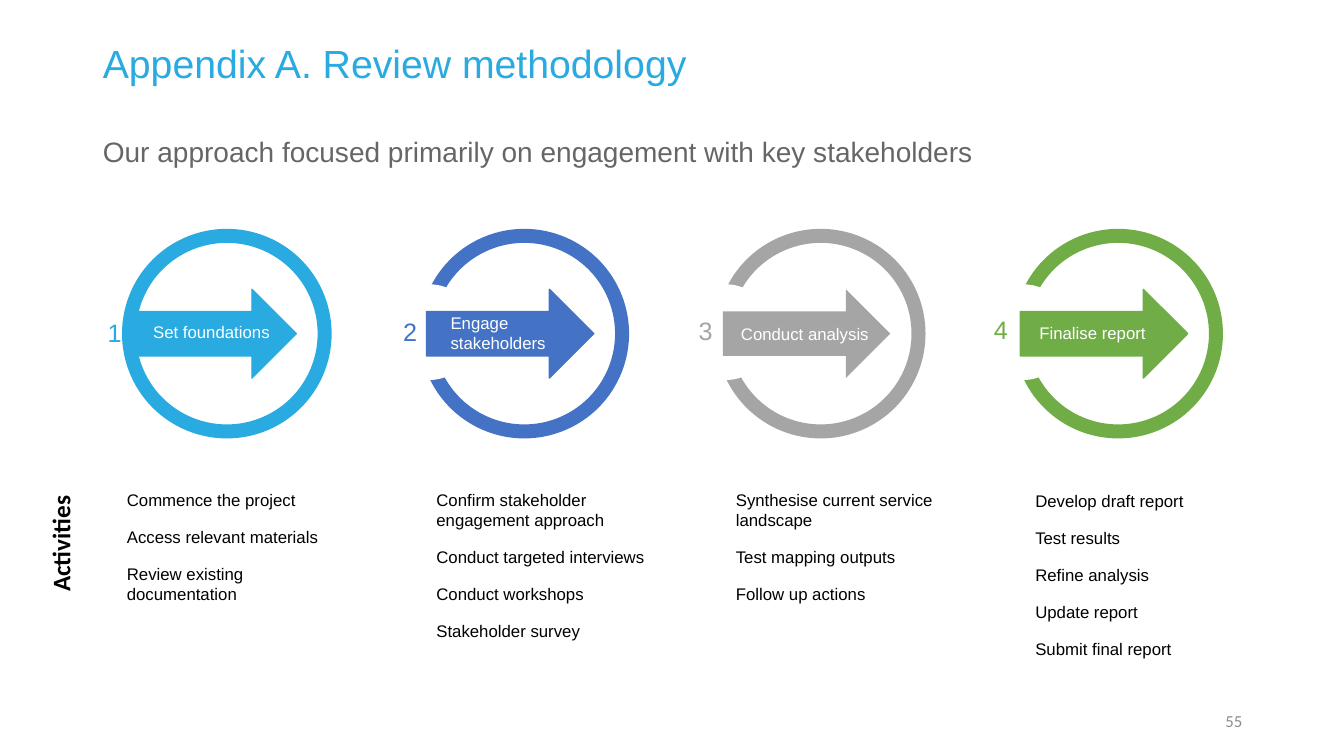
from pptx import Presentation
from pptx.dml.color import RGBColor
from pptx.enum.shapes import MSO_SHAPE
from pptx.enum.text import MSO_ANCHOR, MSO_AUTO_SIZE, PP_ALIGN
from pptx.oxml.ns import qn
from pptx.util import Pt

PX = 9144  # EMU in one px, 100 px to the inch
OVAL, ARROW = MSO_SHAPE.OVAL, MSO_SHAPE.RIGHT_ARROW
TOP, MIDDLE = MSO_ANCHOR.TOP, MSO_ANCHOR.MIDDLE
LEFT, RIGHT = PP_ALIGN.LEFT, PP_ALIGN.RIGHT
GROW, FIXED = MSO_AUTO_SIZE.SHAPE_TO_FIT_TEXT, MSO_AUTO_SIZE.NONE

CYAN = RGBColor(0x29, 0xAA, 0xE1)
BLUE = RGBColor(0x44, 0x72, 0xC4)
GREY = RGBColor(0xA5, 0xA5, 0xA5)
GREEN = RGBColor(0x70, 0xAD, 0x47)
WHITE = RGBColor(0xFF, 0xFF, 0xFF)
BLACK = RGBColor(0, 0, 0)
SUBTITLE_GREY = RGBColor(0x66, 0x66, 0x66)
PAGE_GREY = RGBColor(0x8C, 0x8C, 0x8C)

RING_LEFT, RING_PITCH = 128, 294.67

# colour, label, label box (offset from ring, top, height), list box (left, top, height), activities
STAGES = [
    (CYAN, "Set foundations", (14, 312, 34), (116, 481, 125),
     ["Commence the project", "Access relevant materials", "Review existing documentation"]),
    (BLUE, "Engage stakeholders", (14, 308, 44), (423, 481, 162),
     ["Confirm stakeholder engagement approach", "Conduct targeted interviews",
      "Conduct workshops", "Stakeholder survey"]),
    (GREY, "Conduct analysis", (8, 314, 34), (720, 481, 125),
     ["Synthesise current service landscape", "Test mapping outputs", "Follow up actions"]),
    (GREEN, "Finalise report", (9, 313, 34), (1017, 482, 178),
     ["Develop draft report", "Test results", "Refine analysis", "Update report",
      "Submit final report"]),
]


def emu(*lengths):
    return [round(n * PX) for n in lengths]


def add_run(p, text, size, color, font="Arial", bold=False):
    r = p.add_run()
    r.text = text
    r.font.name, r.font.size, r.font.bold = font, Pt(size), bold
    r.font.color.rgb = color


def add_text(s, box, lines, size, color, font="Arial", bold=False,
             anchor=TOP, align=LEFT, wrap=True, grow=False):
    """Text box with one paragraph per line, 12 pt apart."""
    sp = s.shapes.add_textbox(*emu(*box))
    tf = sp.text_frame
    tf.word_wrap = wrap
    tf.auto_size = GROW if grow else FIXED
    tf.vertical_anchor = anchor
    for i, line in enumerate(lines):
        p = tf.add_paragraph() if i else tf.paragraphs[0]
        p.alignment = align
        p.space_before = Pt(6 if i else 0)
        p.space_after = Pt(6 if i < len(lines) - 1 else 0)
        add_run(p, line, size, color, font, bold)
    return sp


def fill_placeholder(sp, box, text, size, color):
    sp.left, sp.top, sp.width, sp.height = emu(*box)
    tf = sp.text_frame
    tf.word_wrap = True
    tf.auto_size = FIXED
    tf.vertical_anchor = MIDDLE
    p = tf.paragraphs[0]
    p.alignment = LEFT
    p.space_before = Pt(0)
    add_run(p, text, size, color)
    return p


def remove_bullet(p):
    pPr = p._p.get_or_add_pPr()
    pPr.set("marL", "0")
    pPr.set("indent", "0")
    pPr.append(pPr.makeelement(qn("a:buNone"), {}))


def add_figure(s, preset, box, fill=None, line=None, weight=1):
    sp = s.shapes.add_shape(preset, *emu(*box))
    sp.shadow.inherit = False
    if fill is None:
        sp.fill.background()
    else:
        sp.fill.solid()
        sp.fill.fore_color.rgb = fill
    if line is None:
        sp.line.fill.background()
    else:
        sp.line.color.rgb = line
        sp.line.width = Pt(weight)


def add_stage(s, i, color, label, label_box, list_box, activities):
    x = round(RING_LEFT + i * RING_PITCH)
    add_figure(s, OVAL, (x, 234, 194, 194), line=color, weight=10)
    if i:  # the first ring stays closed
        add_figure(s, OVAL, (x - 45, 282, 95, 95), fill=WHITE)
    add_figure(s, ARROW, (x, 287, 166, 88), fill=color, line=None if color == GREY else color)
    offset, top, height = label_box
    add_text(s, (x + offset, top, 151, height), [label], 12, WHITE, anchor=MIDDLE)
    left, top, height = list_box
    add_text(s, (left, top, 234, height), activities, 12, BLACK, grow=True)
    add_text(s, (97 + 293 * i, 310 - i, 34, 40), [str(i + 1)], 18, color, wrap=False, grow=True)


def main():
    prs = Presentation()
    prs.slide_width, prs.slide_height = emu(1333, 750)
    s = prs.slides.add_slide(prs.slide_layouts[1])
    title = fill_placeholder(s.shapes.title, (92, 40, 1150, 51),
                             "Appendix A. Review methodology", 28, CYAN)
    title.line_spacing = 0.9
    subtitle = fill_placeholder(
        s.placeholders[1], (92, 116, 1150, 68),
        "Our approach focused primarily on engagement with key stakeholders", 20, SUBTITLE_GREY)
    remove_bullet(subtitle)
    for i, stage in enumerate(STAGES):
        add_stage(s, i, *stage)
    activities = add_text(s, (2, 519, 116, 40), ["Activities"], 18, BLACK, "Calibri",
                          bold=True, wrap=False, grow=True)
    activities.rotation = 270
    add_text(s, (942, 695, 300, 40), ["55"], 12, PAGE_GREY, "Calibri", anchor=MIDDLE, align=RIGHT)
    prs.save("out.pptx")


if __name__ == "__main__":
    main()
